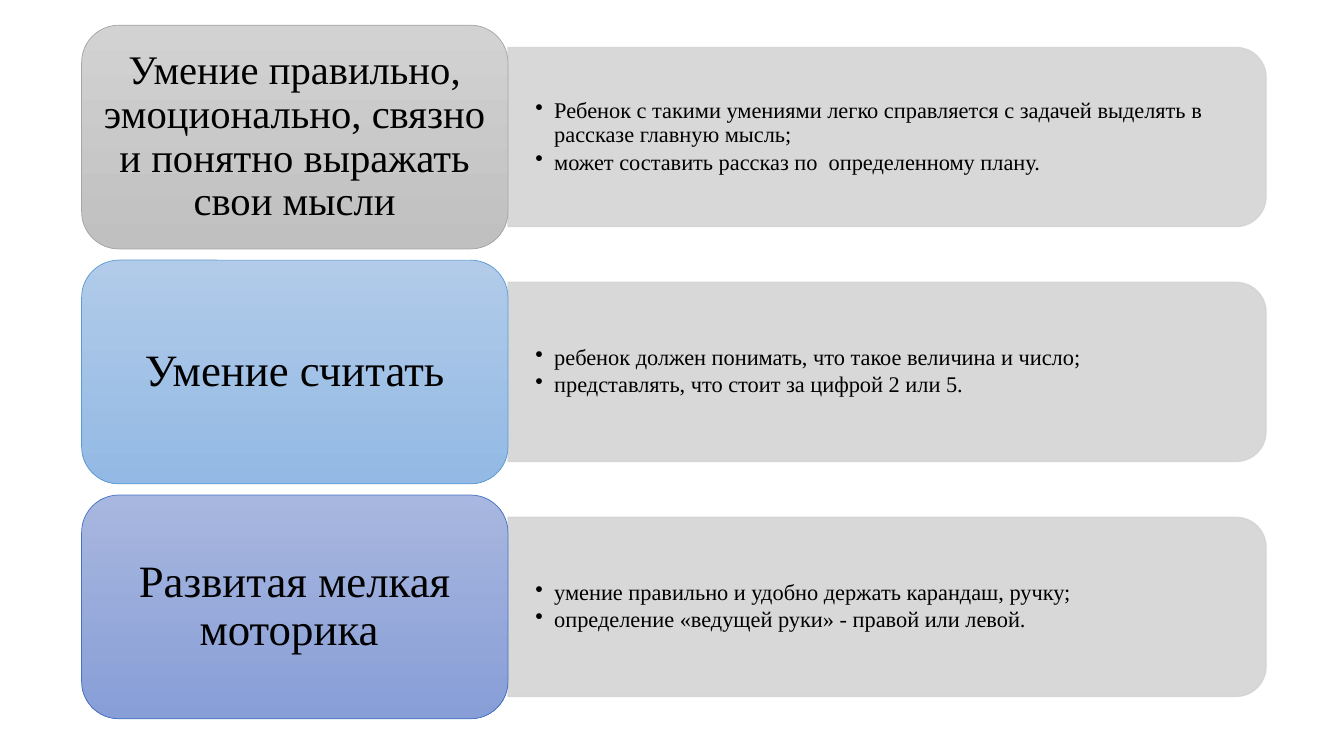
from lxml import etree
from pptx import Presentation
from pptx.dml.color import RGBColor
from pptx.enum.shapes import MSO_SHAPE
from pptx.enum.text import MSO_ANCHOR, PP_ALIGN
from pptx.oxml.ns import qn
from pptx.util import Pt

ROUND = MSO_SHAPE.ROUNDED_RECTANGLE
TAB = MSO_SHAPE.ROUND_2_SAME_RECTANGLE
MIDDLE = MSO_ANCHOR.MIDDLE
CENTER = PP_ALIGN.CENTER
LEFT = PP_ALIGN.LEFT

FONT = "Times New Roman"
BLACK = RGBColor(0x00, 0x00, 0x00)
PANEL = RGBColor(0xD4, 0xD4, 0xD4)
GRAY = (RGBColor(0xD2, 0xD2, 0xD2), RGBColor(0xC0, 0xC0, 0xC0), RGBColor(0xA5, 0xA5, 0xA5))
BLUE = (RGBColor(0xB1, 0xCB, 0xE9), RGBColor(0x93, 0xB9, 0xE4), RGBColor(0x5B, 0x9B, 0xD5))
INDIGO = (RGBColor(0xA8, 0xB7, 0xDF), RGBColor(0x88, 0x9E, 0xD7), RGBColor(0x44, 0x72, 0xC4))

ROWS = [
    ("Умение правильно, эмоционально, связно и понятно выражать свои мысли", 29, GRAY,
     ["Ребенок с такими умениями легко справляется с задачей выделять в рассказе главную мысль;",
      "может составить рассказ по  определенному плану."]),
    ("Умение считать", 32, BLUE,
     ["ребенок должен понимать, что такое величина и число;",
      "представлять, что стоит за цифрой 2 или 5."]),
    ("Развитая мелкая моторика ", 32, INDIGO,
     ["умение правильно и удобно держать карандаш, ручку;",
      "определение «ведущей руки» - правой или левой."]),
]


def set_text(frame, lines, size, align, pad):
    """Fill a text frame with evenly formatted paragraphs."""
    frame.word_wrap = True
    frame.vertical_anchor = MIDDLE
    frame.margin_left = frame.margin_right = Pt(pad)
    frame.margin_top = frame.margin_bottom = Pt(pad / 2)
    frame.text = "\n".join(lines)
    for para in frame.paragraphs:
        para.alignment = align
        para.line_spacing = 0.9
        font = para.runs[0].font
        font.name, font.size = FONT, Pt(size)
        font.color.rgb = BLACK


def add_label(slide, left, top, width, height, text, size, colors):
    """Draw the shaded label of a row."""
    start, end, edge = colors
    label = slide.shapes.add_shape(ROUND, Pt(left), Pt(top), Pt(width), Pt(height))
    label.shadow.inherit = False
    label.fill.gradient()
    label.fill.gradient_angle = 270
    for stop, color in zip(label.fill.gradient_stops, (start, end)):
        stop.color.rgb = color
    label.line.color.rgb = edge
    label.line.width = Pt(0.5)
    set_text(label.text_frame, [text], size, CENTER, 8)


def add_panel(slide, left, top, width, height, lines):
    """Draw the panel of a row, rounded on the right, with its bullets."""
    shift = (width - height) / 2
    panel = slide.shapes.add_shape(TAB, Pt(left + shift), Pt(top - shift), Pt(height), Pt(width))
    panel.rotation = 90
    panel.shadow.inherit = False
    panel.fill.solid()
    panel.fill.fore_color.rgb = panel.line.color.rgb = PANEL
    panel.line.width = Pt(1)
    for color in panel._element.spPr.iter(qn("a:srgbClr")):
        etree.SubElement(color, qn("a:alpha"), val="90000")

    box = slide.shapes.add_textbox(Pt(left), Pt(top), Pt(width), Pt(height))
    set_text(box.text_frame, lines, 16, LEFT, 19.5)
    for para in box.text_frame.paragraphs:
        para.space_after = Pt(2.4)
        props = para._p.get_or_add_pPr()
        props.set("marL", str(Pt(13.5)))
        props.set("indent", str(-Pt(13.5)))
        etree.SubElement(props, qn("a:buChar"), char="•")


def add_row(slide, left, top, width, height, row):
    """Place a label and its panel side by side in the given box."""
    text, size, colors, lines = row
    split = width * 0.36
    inset = height * 0.1
    add_panel(slide, left + split, top + inset, width - split, height - 2 * inset, lines)
    add_label(slide, left, top, split, height, text, size, colors)


def add_list(slide, left, top, width, height):
    """Stack the rows in the given box with equal gaps."""
    gap = 8
    tall = (height - gap * (len(ROWS) - 1)) / len(ROWS)
    for index, row in enumerate(ROWS):
        add_row(slide, left, top + index * (tall + gap), width, tall, row)


def main():
    """Build the slide and save it."""
    deck = Presentation()
    deck.slide_width, deck.slide_height = Pt(960), Pt(540)
    slide = deck.slides.add_slide(deck.slide_layouts[6])
    add_list(slide, 58.3, 18, 846, 495.4)
    deck.save("out.pptx")


if __name__ == "__main__":
    main()
